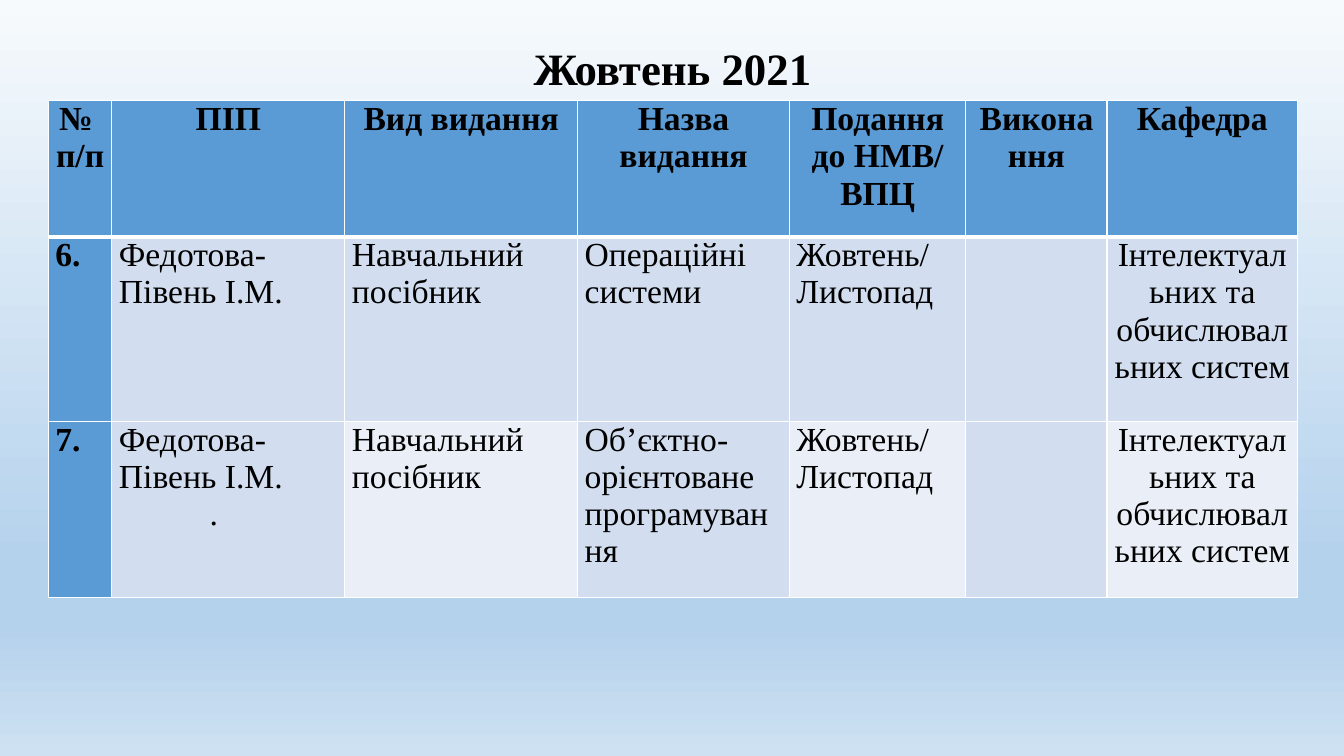
from lxml import etree
from pptx import Presentation
from pptx.dml.color import RGBColor
from pptx.enum.text import MSO_ANCHOR, PP_ALIGN
from pptx.oxml.ns import qn
from pptx.util import Inches, Pt

LEFT, CENTER = PP_ALIGN.LEFT, PP_ALIGN.CENTER
MIDDLE, TOP = MSO_ANCHOR.MIDDLE, MSO_ANCHOR.TOP

# Content: a cell is a tuple of paragraphs
TITLE = "Жовтень 2021"
DEPARTMENT = ("Інтелектуальних та обчислювальних систем",)
MANUAL = ("Навчальний посібник",)
MONTHS = ("Жовтень/", "Листопад")
AUTHOR = "Федотова-Півень І.М."
ROWS = [
    [("№ ", "п/п"), ("ПІП",), ("Вид видання",), ("Назва видання",),
     ("Подання до НМВ/", "ВПЦ"), ("Виконання",), ("Кафедра",)],
    [("6.",), (AUTHOR,), MANUAL, ("Операційні системи",), MONTHS, (), DEPARTMENT],
    [("7.",), (AUTHOR, "."), MANUAL, ("Об’єктно-орієнтоване програмування",),
     MONTHS, (), DEPARTMENT],
]
COLUMN_WIDTHS = [0.63, 2.31, 2.31, 2.1, 1.75, 1.4, 1.89]
ROW_HEIGHTS = [1.35, 1.83, 1.75]
BACKGROUND_STOPS = [(0, "F7FAFD"), (74, "B5D2EC"), (83, "B5D2EC"), (100, "CEE1F2")]

FONT = "Times New Roman"
BLACK = RGBColor(0x00, 0x00, 0x00)
WHITE = RGBColor(0xFF, 0xFF, 0xFF)
BLUE = RGBColor(0x5B, 0x9B, 0xD5)
PALE = RGBColor(0xD2, 0xDE, 0xEF)
PALEST = RGBColor(0xEA, 0xEF, 0xF7)


def write(frame, lines, size=24, bold=False, align=LEFT, spacing=None):
    for index, line in enumerate(lines):
        para = frame.add_paragraph() if index else frame.paragraphs[0]
        para.alignment = align
        if spacing:
            para.line_spacing = spacing
        span = para.add_run()
        span.text = line
        span.font.name = FONT
        span.font.size = Pt(size)
        span.font.bold = bold
        span.font.color.rgb = BLACK


def add_border(cell, side, width):
    line = etree.SubElement(cell._tc.get_or_add_tcPr(), qn(f"a:ln{side}"), w=str(Pt(width)))
    fill = etree.SubElement(line, qn("a:solidFill"))
    etree.SubElement(fill, qn("a:srgbClr"), val=str(WHITE))


def paint_background(page):
    fill = page.background.fill
    fill.gradient()
    fill.gradient_angle = 270
    stops = page.background._cSld.find(".//" + qn("a:gsLst"))
    for stop in list(stops):
        stops.remove(stop)
    for position, color in BACKGROUND_STOPS:
        stop = etree.SubElement(stops, qn("a:gs"), pos=str(position * 1000))
        etree.SubElement(stop, qn("a:srgbClr"), val=color)


def cell_fill(row, column):
    if row == 0 or column == 0:
        return BLUE
    return PALEST if row == 2 and column % 2 == 0 else PALE


deck = Presentation()
deck.slide_width, deck.slide_height = Inches(13.33), Inches(7.5)
page = deck.slides.add_slide(deck.slide_layouts.get_by_name("Title Only"))
paint_background(page)

# Title
title = page.shapes.title
title.left, title.top = Inches(0.92), Inches(0.4)
title.width, title.height = Inches(11.5), Inches(0.6)
title.text_frame.vertical_anchor = MIDDLE
write(title.text_frame, [TITLE], size=32, bold=True, align=CENTER, spacing=0.9)

# Table
table = page.shapes.add_table(
    len(ROWS), len(COLUMN_WIDTHS), Inches(0.48), Inches(1),
    Inches(sum(COLUMN_WIDTHS)), Inches(sum(ROW_HEIGHTS))).table
table.first_col = True
for column, width in zip(table.columns, COLUMN_WIDTHS):
    column.width = Inches(width)
for row, height in zip(table.rows, ROW_HEIGHTS):
    row.height = Inches(height)

last_column = len(COLUMN_WIDTHS) - 1
for row, contents in enumerate(ROWS):
    for column, lines in enumerate(contents):
        cell = table.cell(row, column)
        cell.margin_left = cell.margin_right = Inches(0.07)
        cell.margin_top = cell.margin_bottom = 0
        cell.vertical_anchor = TOP
        widths = {"L": 1, "R": 1, "T": 3 if row == 1 else 1, "B": 3 if row == 0 else 1}
        for side, width in widths.items():
            add_border(cell, side, width)
        cell.fill.solid()
        cell.fill.fore_color.rgb = cell_fill(row, column)
        centered = row == 0 or column == last_column
        write(cell.text_frame, lines, bold=row == 0 or column == 0,
              align=CENTER if centered else LEFT)

# The lone full stop under the second author is indented
stop_para = table.cell(2, 1).text_frame.paragraphs[1]
stop_para._p.get_or_add_pPr().set("marL", str(Inches(0.9)))

deck.save("out.pptx")
